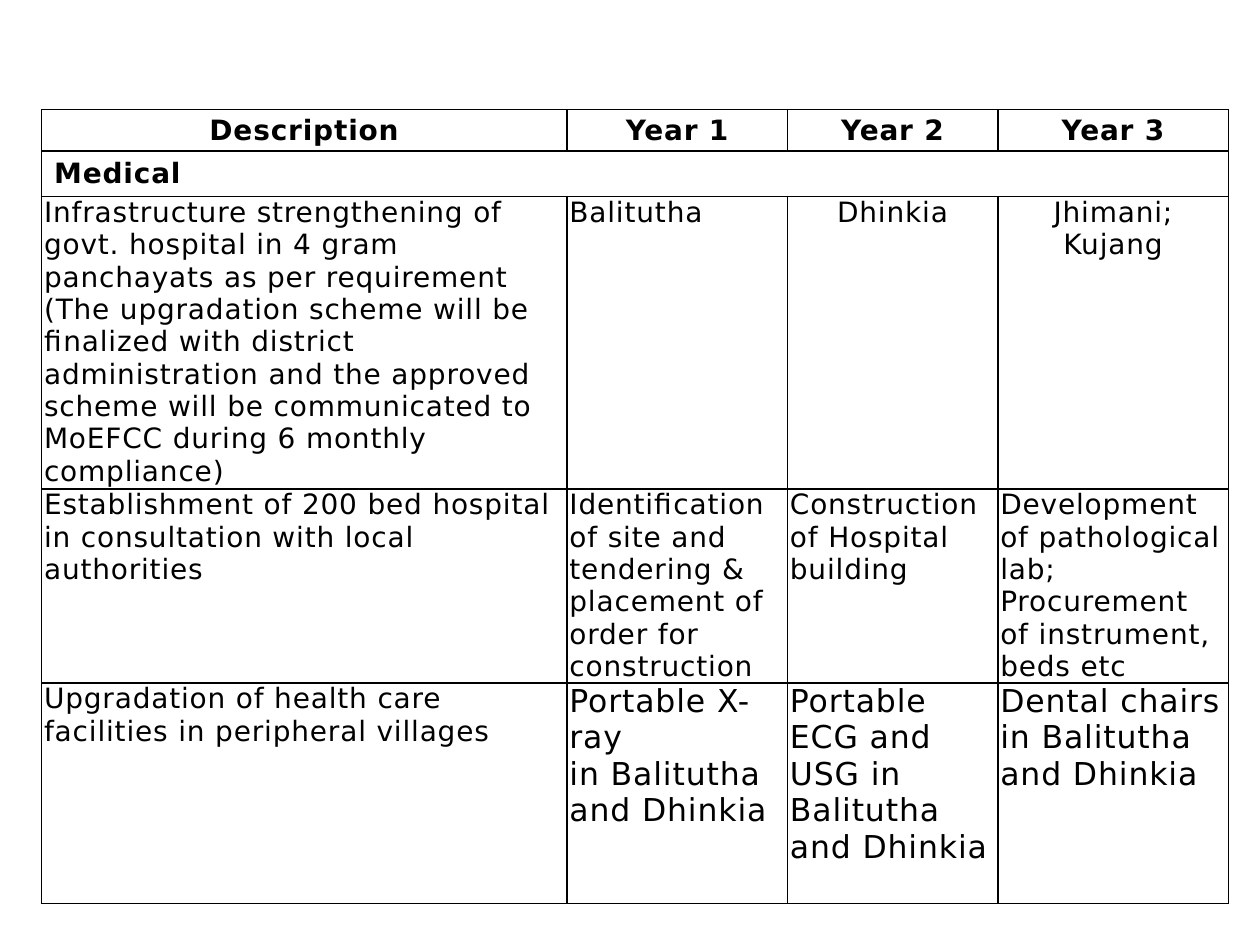
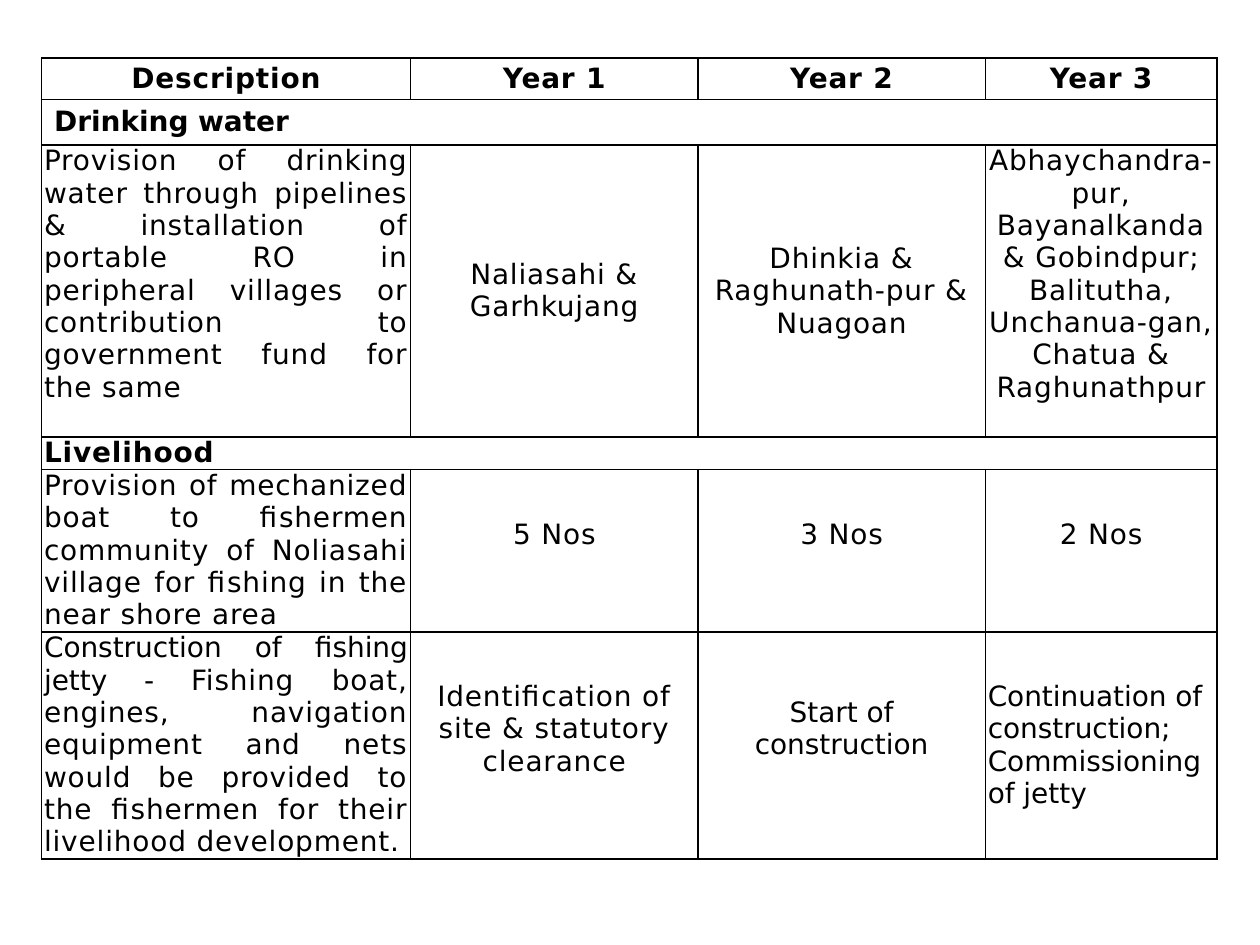
"""Build two slides of three-year village development plans."""
import dataclasses

import pptx
import pptx.dml.color
import pptx.enum.text
import pptx.oxml
import pptx.oxml.ns
import pptx.util

Inches = pptx.util.Inches
Pt = pptx.util.Pt
Align = pptx.enum.text.PP_ALIGN
Anchor = pptx.enum.text.MSO_ANCHOR


@dataclasses.dataclass(frozen=True)
class Theme:
    """Hold the colours, type sizes and spacing of the slides."""
    font: str = "DejaVu Sans"
    ink: str = "000000"
    size: int = 16
    large: int = 18
    track: int = 50
    line: int = 1
    pad: float = 0.02
    inset: float = 0.1
    lift: float = 0.26


THEME = Theme()
BASE = dict(align=Align.LEFT, anchor=Anchor.TOP, size=THEME.size, bold=False,
            track=THEME.track, side=THEME.pad, top=0, foot=0)
MID = dict(align=Align.CENTER, anchor=Anchor.MIDDLE)
INSET = dict(bold=True, side=THEME.inset, top=0.05, foot=0.05)
KINDS = {
    "left": {},
    "center": dict(align=Align.CENTER),
    "head": dict(MID, bold=True),
    "inset": INSET,
    "tight inset": dict(INSET, track=0),
    "section": dict(bold=True),
    "large": dict(size=THEME.large),
    "block": dict(align=Align.JUSTIFY),
    "middle": MID,
    "lifted": dict(MID, foot=THEME.lift),
    "tight lifted": dict(MID, foot=THEME.lift, track=0),
    "tight left": dict(anchor=Anchor.MIDDLE, track=0),
}

HEADS = [("head", text) for text in
         ("Description", "Year 1", "Year 2", "Year 3")]

HEALTH = [
    HEADS,
    [("inset", "Medical")],
    [("left", "Infrastructure strengthening of govt. hospital in 4 gram "
      "panchayats as per requirement (The upgradation scheme will be "
      "finalized with district administration and the approved scheme will "
      "be communicated to MoEFCC during 6 monthly compliance)"),
     ("left", "Balitutha"),
     ("center", "Dhinkia"),
     ("center", "Jhimani;\nKujang")],
    [("left", "Establishment of 200 bed hospital in consultation with local "
      "authorities"),
     ("left", "Identification of site and tendering & placement of order "
      "for construction"),
     ("left", "Construction of Hospital building"),
     ("left", "Development of pathological lab; Procurement of instrument, "
      "beds etc")],
    [("left", "Upgradation of health care facilities in peripheral villages"),
     ("large", "Portable X-ray\nin Balitutha and Dhinkia"),
     ("large", "Portable ECG and USG in Balitutha and Dhinkia"),
     ("large", "Dental chairs in Balitutha and Dhinkia")],
]

WATER = [
    HEADS,
    [("tight inset", "Drinking water")],
    [("block", "Provision of drinking water through pipelines & installation "
      "of portable RO in peripheral villages or contribution to government "
      "fund for the same"),
     ("middle", "Naliasahi & Garhkujang"),
     ("middle", "Dhinkia & Raghunath-pur & Nuagoan"),
     ("center", "Abhaychandra-pur, Bayanalkanda & Gobindpur;\n"
      "Balitutha, Unchanua-gan, Chatua & Raghunathpur")],
    [("section", "Livelihood")],
    [("block", "Provision of mechanized boat to fishermen community of "
      "Noliasahi village for fishing in the near shore area"),
     ("lifted", "5 Nos"), ("lifted", "3 Nos"), ("lifted", "2 Nos")],
    [("block", "Construction of fishing jetty - |Fishing boat, engines, "
      "navigation equipment and nets would be provided to the fishermen for "
      "their livelihood development."),
     ("lifted", "Identification of site & statutory clearance"),
     ("tight lifted", "Start of construction"),
     ("tight left", "Continuation of construction;\nCommissioning of jetty")],
]


def apply(item, values):
    """Set each named value on the item."""
    for name, value in values.items():
        setattr(item, name, value)


def border(cell):
    """Draw a thin line on all four sides of a cell."""
    props = cell._tc.get_or_add_tcPr()
    space = pptx.oxml.ns.nsdecls("a")
    for place, side in enumerate("LRTB"):
        props.insert(place, pptx.oxml.parse_xml(
            f'<a:ln{side} {space} w="{Pt(THEME.line)}"><a:solidFill>'
            f'<a:srgbClr val="{THEME.ink}"/></a:solidFill></a:ln{side}>'))


def add_run(para, text, look, track):
    """Add one run of text with its letter spacing."""
    run = para.add_run()
    run.text = text
    apply(run.font, dict(name=THEME.font, size=Pt(look["size"]),
                         bold=look["bold"]))
    run.font.color.rgb = pptx.dml.color.RGBColor.from_string(THEME.ink)
    run._r.get_or_add_rPr().set("spc", str(track))


def fill_cell(cell, kind, text):
    """Write a cell; a bar ends a lead without letter spacing."""
    look = {**BASE, **KINDS[kind]}
    apply(cell, dict(vertical_anchor=look["anchor"],
                     margin_left=Inches(look["side"]),
                     margin_right=Inches(look["side"]),
                     margin_top=Inches(look["top"]),
                     margin_bottom=Inches(look["foot"])))
    frame = cell.text_frame
    for index, line in enumerate(text.split("\n")):
        para = frame.add_paragraph() if index else frame.paragraphs[0]
        para.alignment = look["align"]
        lead, bar, rest = line.rpartition("|")
        if bar:
            add_run(para, lead, look, 0)
        add_run(para, rest, look, look["track"])


def add_plan(deck, top, widths, heights, rows):
    """Add a slide with one plan; a lone entry spans its row."""
    slide = deck.slides.add_slide(deck.slide_layouts[6])
    table = slide.shapes.add_table(
        len(rows), len(widths), Inches(0.33), Inches(top),
        Inches(sum(widths)), Inches(sum(heights))).table
    apply(table, dict(first_row=False, horz_banding=False))
    for column, width in zip(table.columns, widths):
        column.width = Inches(width)
    for index, (height, row) in enumerate(zip(heights, rows)):
        table.rows[index].height = Inches(height)
        cells = list(table.rows[index].cells)
        for cell in cells:
            cell.fill.background()
            border(cell)
        if len(row) == 1:
            cells[0].merge(cells[-1])
        for cell, (kind, text) in zip(cells, row):
            fill_cell(cell, kind, text)


def main():
    """Build and save the deck."""
    deck = pptx.Presentation()
    apply(deck, dict(slide_width=Inches(10), slide_height=Inches(7.5)))
    add_plan(deck, 0.87, [4.17, 1.75, 1.67, 1.83],
             [0.33, 0.36, 2.32, 1.54, 1.75], HEALTH)
    add_plan(deck, 0.46, [2.93, 2.28, 2.28, 1.84],
             [0.33, 0.36, 2.32, 0.25, 1.29, 1.8], WATER)
    deck.save("out.pptx")


if __name__ == "__main__":
    main()
